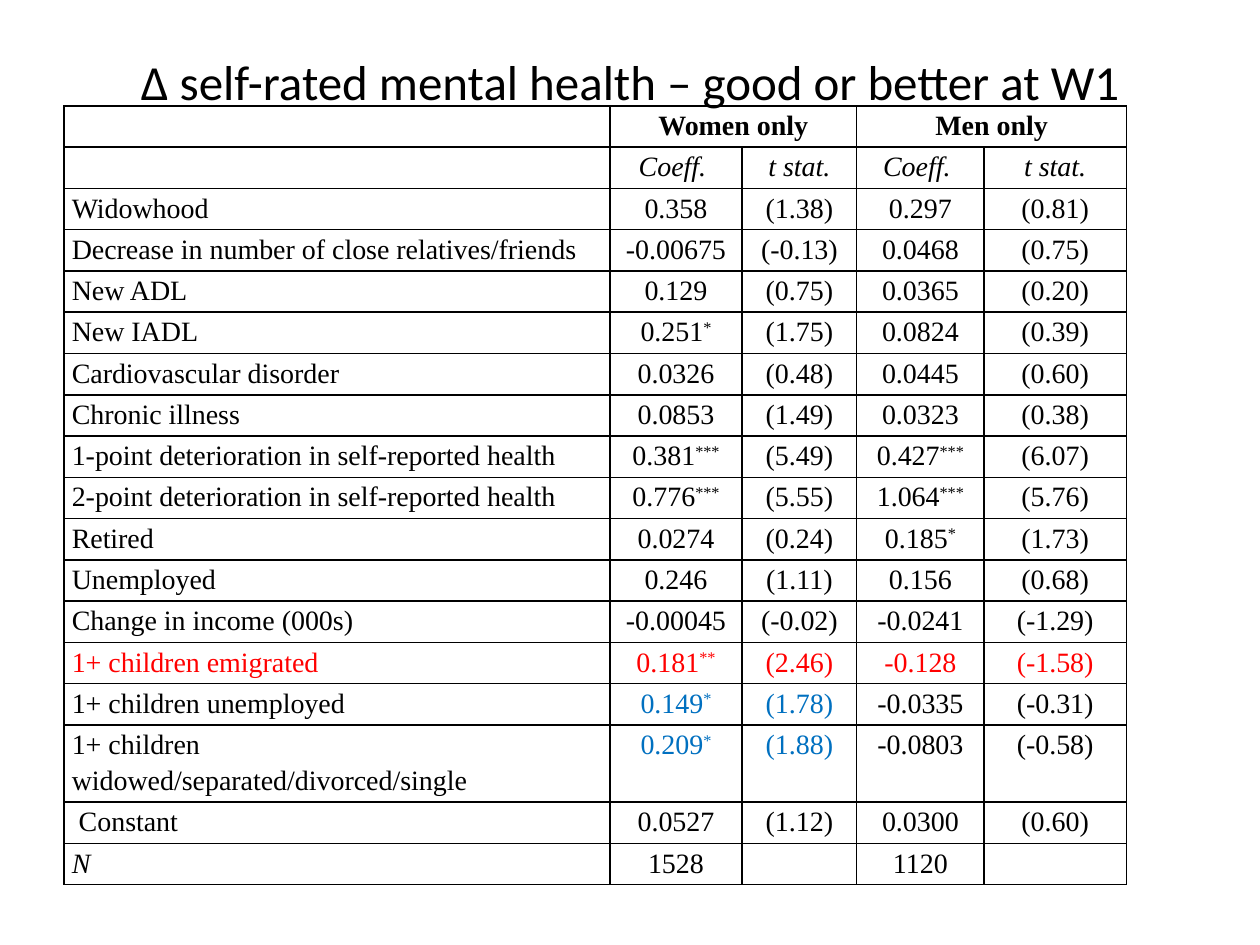
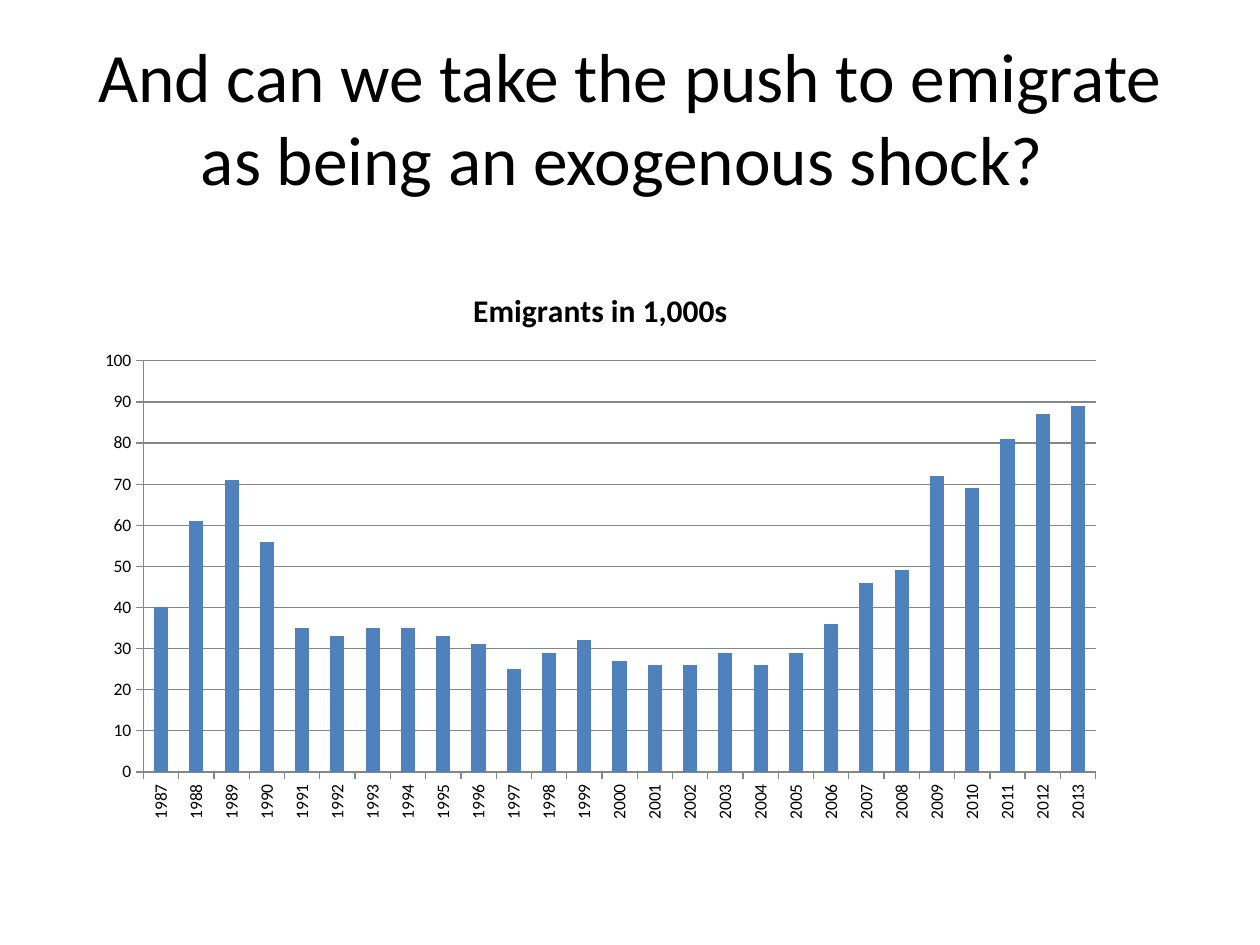
import pptx
import pptx.chart.data
import pptx.dml.color
import pptx.enum.chart
import pptx.enum.text
import pptx.oxml
import pptx.oxml.ns
import pptx.util
from pptx.util import Inches

COLORS = {"text": "000000", "emigrated": "FF0000", "significant": "0070C0",
          "bars": "4F81BD", "axes": "868686"}
TITLE_FONT = "Calibri"
TABLE_FONT = "Times New Roman"

COLUMN_WIDTHS = [4.33, 1.05, 0.91, 1.01, 1.13]
ROW_HEIGHT = 5.9 / 18
REGRESSION_ROWS = [
    ("", "Women only", "", "Men only", ""),
    ("", "Coeff. ", "t stat.", "Coeff. ", "t stat."),
    ("Widowhood", "0.358", "(1.38)", "0.297", "(0.81)"),
    ("Decrease in number of close relatives/friends", "-0.00675", "(-0.13)", "0.0468", "(0.75)"),
    ("New ADL", "0.129", "(0.75)", "0.0365", "(0.20)"),
    ("New IADL", "0.251*", "(1.75)", "0.0824", "(0.39)"),
    ("Cardiovascular disorder", "0.0326", "(0.48)", "0.0445", "(0.60)"),
    ("Chronic illness", "0.0853", "(1.49)", "0.0323", "(0.38)"),
    ("1-point deterioration in self-reported health", "0.381***", "(5.49)", "0.427***", "(6.07)"),
    ("2-point deterioration in self-reported health", "0.776***", "(5.55)", "1.064***", "(5.76)"),
    ("Retired", "0.0274", "(0.24)", "0.185*", "(1.73)"),
    ("Unemployed", "0.246", "(1.11)", "0.156", "(0.68)"),
    ("Change in income (000s)", "-0.00045", "(-0.02)", "-0.0241", "(-1.29)"),
    ("1+ children emigrated", "0.181**", "(2.46)", "-0.128", "(-1.58)"),
    ("1+ children unemployed", "0.149*", "(1.78)", "-0.0335", "(-0.31)"),
    ("1+ children widowed/separated/divorced/single", "0.209*", "(1.88)", "-0.0803", "(-0.58)"),
    (" Constant", "0.0527", "(1.12)", "0.0300", "(0.60)"),
    ("N", "1528", "", "1120", ""),
]
EMIGRATED_ROW = 13
SIGNIFICANT_ROWS = (14, 15)
WOMEN_COLUMNS = (1, 2)

FIRST_YEAR = 1987
EMIGRANTS = [40, 61, 71, 56, 35, 33, 35, 35, 33, 31, 25, 29, 32, 27,
             26, 26, 29, 26, 29, 36, 46, 49, 72, 69, 81, 87, 89]


def rgb(name):
    return pptx.dml.color.RGBColor.from_string(COLORS[name])


def cell_color(row, column):
    if row == EMIGRATED_ROW:
        return "emigrated"
    if row in SIGNIFICANT_ROWS and column in WOMEN_COLUMNS:
        return "significant"
    return "text"


class Deck:
    """Hold the shared style and the current slide, and add elements to it."""

    def __init__(self):
        self.presentation = pptx.Presentation()
        self.presentation.slide_width = Inches(10)
        self.presentation.slide_height = Inches(7.5)
        self.slide = None

    def add_slide(self):
        self.slide = self.presentation.slides.add_slide(self.presentation.slide_layouts[6])

    def style_font(self, font, name, size, color="text", bold=False, italic=False):
        font.name = name
        font.size = pptx.util.Pt(size)
        font.color.rgb = rgb(color)
        font.bold = bold
        font.italic = italic

    def add_title(self, text, top, height, size):
        shape = self.slide.shapes.add_textbox(Inches(0.5), Inches(top), Inches(9), Inches(height))
        text_frame = shape.text_frame
        text_frame.word_wrap = True
        text_frame.vertical_anchor = pptx.enum.text.MSO_ANCHOR.MIDDLE
        text_frame.text = text
        paragraph = text_frame.paragraphs[0]
        paragraph.alignment = pptx.enum.text.PP_ALIGN.CENTER
        self.style_font(paragraph.runs[0].font, TITLE_FONT, size)

    def add_borders(self, cell):
        properties = cell._tc.get_or_add_tcPr()
        for index, side in enumerate(("lnL", "lnR", "lnT", "lnB")):
            line = pptx.oxml.parse_xml(
                f'<a:{side} {pptx.oxml.ns.nsdecls("a")} w="12700"><a:solidFill>'
                f'<a:srgbClr val="{COLORS["text"]}"/></a:solidFill></a:{side}>')
            properties.insert(index, line)

    def fill_cell(self, cell, text, centered, color, bold, italic):
        cell.margin_left = cell.margin_right = Inches(0.06)
        cell.margin_top = cell.margin_bottom = 0
        cell.fill.background()
        self.add_borders(cell)
        if not text:
            return
        paragraph = cell.text_frame.paragraphs[0]
        paragraph.line_spacing = 1.15
        if centered:
            paragraph.alignment = pptx.enum.text.PP_ALIGN.CENTER
        number = text.rstrip("*")
        paragraph.text = number
        stars = text[len(number):]
        if stars:
            run = paragraph.add_run()
            run.text = stars
            run._r.get_or_add_rPr().set("baseline", "30000")
        for run in paragraph.runs:
            self.style_font(run.font, TABLE_FONT, 16, color, bold, italic)

    def add_table(self, rows, left, top):
        table = self.slide.shapes.add_table(
            len(rows), len(COLUMN_WIDTHS), Inches(left), Inches(top),
            Inches(sum(COLUMN_WIDTHS)), Inches(ROW_HEIGHT * len(rows))).table
        table.first_row = table.horz_banding = False
        for column, width in zip(table.columns, COLUMN_WIDTHS):
            column.width = Inches(width)
        for row in table.rows:
            row.height = Inches(ROW_HEIGHT)
        for first in (1, 3):
            table.cell(0, first).merge(table.cell(0, first + 1))
        for row, texts in enumerate(rows):
            for column, text in enumerate(texts):
                self.fill_cell(table.cell(row, column), text, column > 0,
                               cell_color(row, column), row == 0, row == 1 or text == "N")

    def style_axis(self, axis):
        axis.major_tick_mark = pptx.enum.chart.XL_TICK_MARK.OUTSIDE
        axis.minor_tick_mark = pptx.enum.chart.XL_TICK_MARK.NONE
        axis.format.line.color.rgb = rgb("axes")
        self.style_font(axis.tick_labels.font, TITLE_FONT, 10)

    def add_column_chart(self, name, categories, values, left, top, width, height):
        chart_data = pptx.chart.data.CategoryChartData()
        chart_data.categories = categories
        chart_data.add_series(name, values)
        chart = self.slide.shapes.add_chart(
            pptx.enum.chart.XL_CHART_TYPE.COLUMN_CLUSTERED, Inches(left), Inches(top),
            Inches(width), Inches(height), chart_data).chart
        self.style_font(chart.font, TITLE_FONT, 10)
        chart.has_legend = False
        chart.has_title = True
        chart.chart_title.include_in_layout = False
        text_frame = chart.chart_title.text_frame
        text_frame.text = name
        self.style_font(text_frame.paragraphs[0].runs[0].font, TITLE_FONT, 18, bold=True)
        plot = chart.plots[0]
        plot.gap_width = 150
        plot.vary_by_categories = False
        fill = plot.series[0].format.fill
        fill.solid()
        fill.fore_color.rgb = rgb("bars")
        self.style_axis(chart.category_axis)
        self.style_axis(chart.value_axis)
        label_body = chart.category_axis._element.find(
            f'{pptx.oxml.ns.qn("c:txPr")}/{pptx.oxml.ns.qn("a:bodyPr")}')
        label_body.set("rot", "-5400000")
        label_body.set("vert", "horz")
        value_axis = chart.value_axis
        value_axis.minimum_scale = 0
        value_axis.maximum_scale = 100
        value_axis.major_unit = 10
        value_axis.has_major_gridlines = True
        value_axis.major_gridlines.format.line.color.rgb = rgb("axes")


def main():
    deck = Deck()

    deck.add_slide()
    deck.add_title("Δ self-rated mental health – good or better at W1", 0.21, 0.87, 28)
    deck.add_table(REGRESSION_ROWS, 0.51, 0.84)

    deck.add_slide()
    deck.add_title("And can we take the push to emigrate as being an exogenous shock? ",
                   0.3, 1.25, 39.6)
    years = [str(FIRST_YEAR + index) for index in range(len(EMIGRANTS))]
    deck.add_column_chart("Emigrants in 1,000s", years, EMIGRANTS, 0.67, 2.1, 8.19, 4.49)

    deck.presentation.save("out.pptx")


if __name__ == "__main__":
    main()
